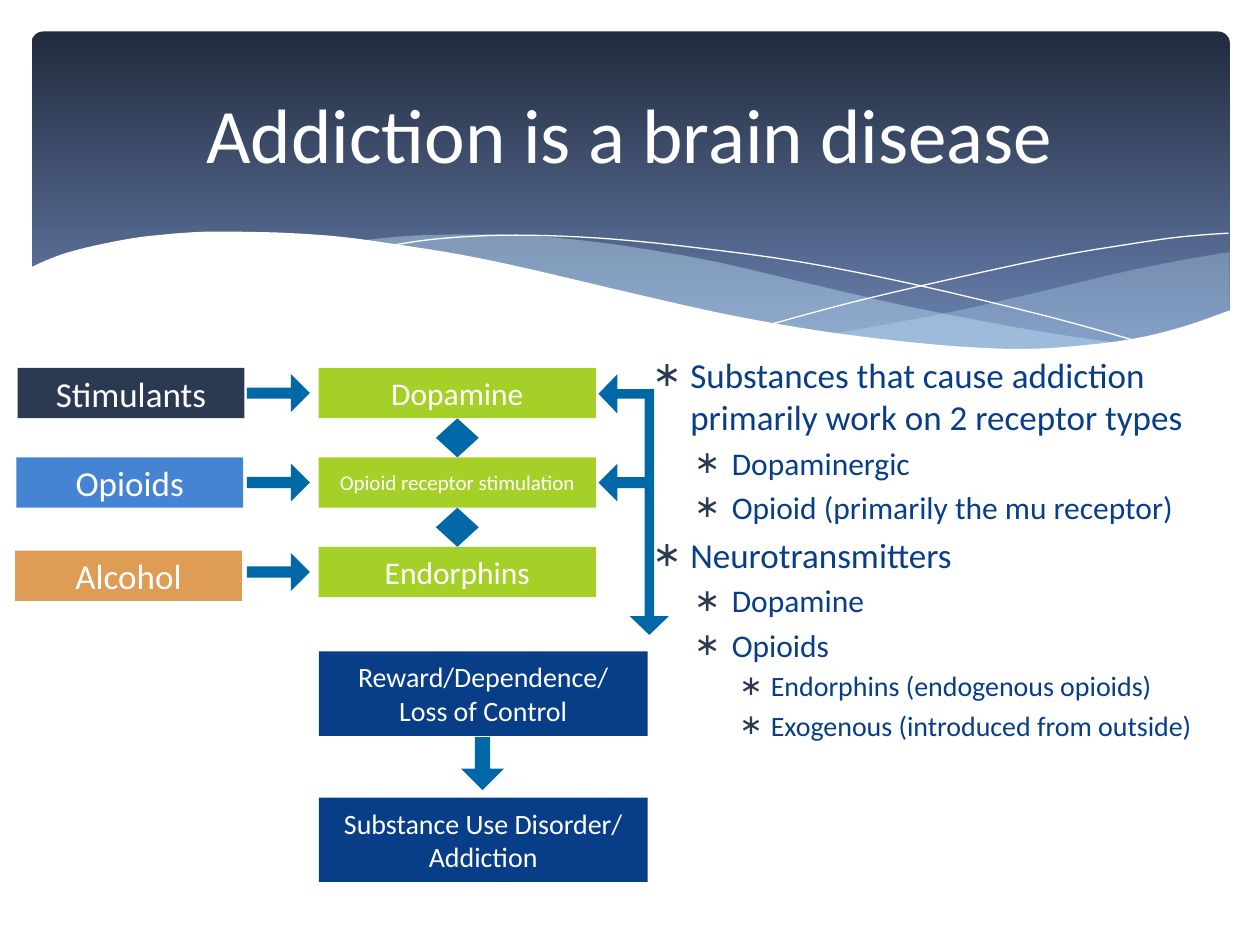
"""Build the slide 'Addiction is a brain disease' with a flow diagram and a bullet list."""
from dataclasses import dataclass

from lxml.etree import SubElement
from pptx import Presentation
from pptx.dml.color import RGBColor
from pptx.enum.shapes import MSO_SHAPE as Shape
from pptx.enum.text import MSO_ANCHOR as Anchor, PP_ALIGN as Align
from pptx.oxml.ns import qn
from pptx.util import Inches, Pt


@dataclass(frozen=True)
class Theme:
    font: str = "Calibri"
    white: str = "FFFFFF"
    navy: str = "2C3952"
    blue: str = "4584D3"
    orange: str = "DE9C54"
    green: str = "A5D028"
    royal: str = "073E87"
    arrow: str = "0168A7"
    wave: str = "C6E7FC"
    banner: tuple = ("212B3E", "6981AF")
    title_size: int = 44
    bullet_sizes: tuple = (20, 18, 16)
    substance_size: int = 20
    target_size: int = 18
    small_size: int = 12
    outcome_size: int = 16


THEME = Theme()
TITLE = "Addiction is a brain disease"
BULLETS = [
    (0, "Substances that cause addiction primarily work on 2 receptor types"),
    (1, "Dopaminergic"),
    (1, "Opioid (primarily the mu receptor)"),
    (0, "Neurotransmitters"),
    (1, "Dopamine"),
    (1, "Opioids"),
    (2, "Endorphins (endogenous opioids)"),
    (2, "Exogenous (introduced from outside)"),
]
BULLET_INDENTS = [(0.3, -0.3), (0.63, -0.3), (0.94, -0.25)]
SUBSTANCES = [
    ("Stimulants", THEME.navy, 0.14, 2.92),
    ("Opioids", THEME.blue, 0.13, 3.63),
    ("Alcohol", THEME.orange, 0.12, 4.37),
]
TARGETS = [
    ("Dopamine", THEME.target_size),
    ("Opioid receptor stimulation", THEME.small_size),
    ("Endorphins", THEME.target_size),
]
OUTCOMES = [
    (5.17, ["Reward/Dependence/", "Loss of Control"]),
    (6.33, ["Substance Use Disorder/", "Addiction"]),
]
ROW_TOP, ROW_PITCH, ROW_HEIGHT = 2.92, 0.71, 0.4
TARGET_LEFT, TARGET_WIDTH = 2.53, 2.2

RIGHT_WAVE = [
    [(9.76, 2), (9.35, 2.07), (8.91, 2.16), (8.32, 2.3), (7.53, 2.48), (6.61, 2.65)],
    [(6.61, 2.65), (7.05, 2.71), (7.57, 2.76), (8.03, 2.78), (8.54, 2.76), (8.97, 2.7),
     (9.35, 2.62), (9.76, 2.47)],
]
MIDDLE_WAVE = [
    [(8.93, 2.73), (8.37, 2.65), (7.75, 2.54), (7.06, 2.4), (6.29, 2.22), (5.69, 2.08),
     (5.14, 1.98), (4.64, 1.91), (4.2, 1.87), (3.8, 1.86), (3.28, 1.87), (2.86, 1.91)],
    [(2.86, 1.91), (3.42, 1.99), (4.04, 2.11), (4.91, 2.32), (5.66, 2.48), (6.34, 2.61),
     (6.95, 2.7), (7.48, 2.76), (8.07, 2.79), (8.48, 2.78), (8.93, 2.73)],
]
FALLING_LINE = [
    (3.09, 1.95), (3.43, 1.9), (3.87, 1.87), (4.33, 1.87), (4.89, 1.9), (5.56, 1.97),
    (6.36, 2.08), (7.27, 2.26), (8.31, 2.51), (9.07, 2.72),
]
RISING_LINE = [
    (6.13, 2.57), (6.72, 2.41), (7.48, 2.23), (8.36, 2.04), (8.95, 1.94), (9.37, 1.88),
    (9.75, 1.85),
]
WHITE_WAVE = [
    [(9.77, 2.46), (9.4, 2.59), (8.99, 2.69), (8.5, 2.75), (8.09, 2.77), (7.61, 2.75),
     (7.08, 2.7), (6.47, 2.62), (5.79, 2.5), (5.03, 2.33), (4.18, 2.13), (3.65, 2.02),
     (3.15, 1.94), (2.71, 1.88), (2.3, 1.85), (1.93, 1.84), (1.61, 1.84), (1.32, 1.86),
     (1.06, 1.89), (0.75, 1.95), (0.52, 2.01), (0.36, 2.07), (0.23, 2.13)],
    [(0.23, 3.29), (9.77, 3.29)],
]


def smooth(knots, steps=4):
    """Return points of a Catmull-Rom curve through the knots."""
    if len(knots) < 3:
        return knots
    padded = [knots[0], *knots, knots[-1]]
    points = []
    for a, b, c, d in zip(padded, padded[1:], padded[2:], padded[3:]):
        for step in range(steps):
            t = step / steps
            points.append(tuple(
                q + t / 2 * (r - p + t * (2 * p - 5 * q + 4 * r - s + t * (3 * (q - r) + s - p)))
                for p, q, r, s in zip(a, b, c, d)))
    return points + [knots[-1]]


def color(value):
    return RGBColor.from_string(value)


def paint(shape, fill):
    shape.shadow.inherit = False
    shape.line.fill.background()
    shape.fill.solid()
    shape.fill.fore_color.rgb = color(fill)


def add_curve(slide, curves, fill=None, opacity=100):
    points = [(Inches(x), Inches(y)) for knots in curves for x, y in smooth(knots)]
    builder = slide.shapes.build_freeform(*points[0])
    builder.add_line_segments(points[1:], close=fill is not None)
    shape = builder.convert_to_shape()
    if fill is None:
        shape.shadow.inherit = False
        shape.fill.background()
        shape.line.color.rgb = color(THEME.white)
        shape.line.width = Pt(0)
        return
    paint(shape, fill)
    if opacity < 100:
        tint = shape.fill._xPr.find(qn("a:solidFill"))[0]
        SubElement(tint, qn("a:alpha"), val=str(opacity * 1000))


def add_preset(slide, kind, left, top, width, height, fill, adjustments=()):
    shape = slide.shapes.add_shape(kind, *map(Inches, (left, top, width, height)))
    paint(shape, fill)
    for index, value in enumerate(adjustments):
        shape.adjustments[index] = value
    return shape


def write(frame, lines, *, sizes, ink=THEME.white, align=Align.CENTER, anchor=Anchor.MIDDLE,
          wrap=True):
    """Write one paragraph for each line, with one size for each."""
    frame.word_wrap = wrap
    frame.vertical_anchor = anchor
    for index, (line, size) in enumerate(zip(lines, sizes)):
        paragraph = frame.add_paragraph() if index else frame.paragraphs[0]
        paragraph.alignment = align
        run = paragraph.add_run()
        run.text = line
        run.font.name = THEME.font
        run.font.size = Pt(size)
        run.font.color.rgb = color(ink)


def add_box(slide, lines, left, top, width, height, fill, size):
    frame = add_preset(slide, Shape.RECTANGLE, left, top, width, height, fill).text_frame
    frame.margin_left = frame.margin_right = Inches(0.13)
    frame.margin_top = frame.margin_bottom = Inches(0.07)
    write(frame, lines, sizes=[size] * len(lines), wrap=False)


def add_banner(slide):
    banner = add_preset(slide, Shape.ROUNDED_RECTANGLE, 0.25, 0.25, 9.51, 2.7,
                        THEME.banner[0], [0.034])
    banner.fill.gradient()
    banner.fill.gradient_angle = 270
    for stop, value, position in zip(banner.fill.gradient_stops, THEME.banner, (0, 0.9)):
        stop.color.rgb = color(value)
        stop.position = position
    add_curve(slide, RIGHT_WAVE, THEME.wave, 29)
    add_curve(slide, MIDDLE_WAVE, THEME.wave, 40)
    add_curve(slide, [FALLING_LINE])
    add_curve(slide, [RISING_LINE])
    add_curve(slide, WHITE_WAVE, THEME.white)


def add_title(slide):
    title = slide.shapes.title
    title.left, title.top, title.width, title.height = map(Inches, (0.5, 0.37, 9, 1.37))
    write(title.text_frame, [TITLE], sizes=[THEME.title_size])
    slide.shapes.element.append(title.element)


def add_bullets(slide):
    frame = slide.shapes.add_textbox(*map(Inches, (5.08, 2.76, 4.92, 4.58))).text_frame
    sizes = [THEME.bullet_sizes[level] for level, _ in BULLETS]
    write(frame, [text for _, text in BULLETS], sizes=sizes, ink=THEME.royal,
          align=Align.LEFT, anchor=Anchor.TOP)
    for paragraph, (level, _), size in zip(frame.paragraphs, BULLETS, sizes):
        paragraph.level = level
        paragraph.space_before = Pt(size * 0.2)
        properties = paragraph._p.get_or_add_pPr()
        margin, indent = BULLET_INDENTS[level]
        properties.set("marL", str(Inches(margin)))
        properties.set("indent", str(Inches(indent)))
        SubElement(SubElement(properties, qn("a:buClr")), qn("a:srgbClr"), val=THEME.navy)
        SubElement(properties, qn("a:buFont"), typeface=THEME.font)
        SubElement(properties, qn("a:buChar"), char="∗")


def add_diagram(slide):
    for row, (text, size) in enumerate(TARGETS):
        top = ROW_TOP + row * ROW_PITCH
        add_box(slide, [text], TARGET_LEFT, top, TARGET_WIDTH, ROW_HEIGHT, THEME.green, size)
        add_preset(slide, Shape.RIGHT_ARROW, 1.96, top + 0.05, 0.5, 0.3, THEME.arrow, [0.292, 0.5])
        if row:
            add_preset(slide, Shape.UP_DOWN_ARROW, 3.46, top - 0.31, 0.34, 0.31, THEME.arrow,
                       [0.5, 0.343])
    for text, fill, left, top in SUBSTANCES:
        add_box(slide, [text], left, top, 1.8, ROW_HEIGHT, fill, THEME.substance_size)
    for top, lines in OUTCOMES:
        add_box(slide, lines, TARGET_LEFT, top, 2.61, 0.67, THEME.royal, THEME.outcome_size)
    add_preset(slide, Shape.DOWN_ARROW, 3.66, 5.85, 0.34, 0.42, THEME.arrow, [0.356, 0.5])
    elbow = add_preset(slide, Shape.LEFT_UP_ARROW, 4.75, 2.97, 0.56, 2.07, THEME.arrow,
                       [0.135, 0.279, 0.269])
    elbow.element.spPr.find(qn("a:xfrm")).set("flipV", "1")
    add_preset(slide, Shape.RIGHT_ARROW, 4.75, 3.68, 0.39, 0.3, THEME.arrow,
               [0.292, 0.5]).rotation = 180


def main():
    presentation = Presentation()
    presentation.slide_width, presentation.slide_height = Inches(10), Inches(7.5)
    slide = presentation.slides.add_slide(presentation.slide_layouts[5])
    for add_part in (add_banner, add_title, add_bullets, add_diagram):
        add_part(slide)
    presentation.save("out.pptx")


if __name__ == "__main__":
    main()
